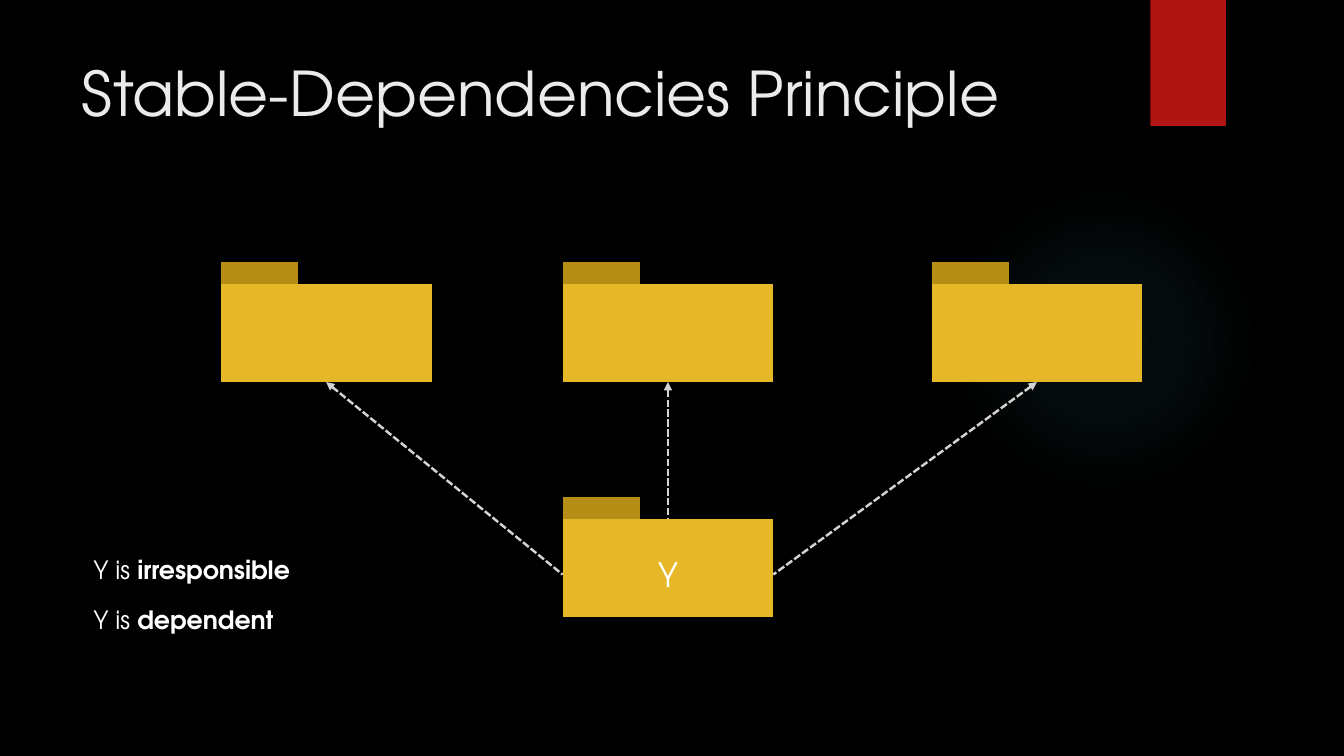
from typing import NamedTuple

import lxml.etree
import pptx
import pptx.dml.color
import pptx.enum.dml
import pptx.enum.shapes
import pptx.enum.text
import pptx.oxml
import pptx.oxml.ns
import pptx.util

Inches = pptx.util.Inches
Shapes = pptx.enum.shapes.MSO_SHAPE
Align = pptx.enum.text.PP_ALIGN

FONT = "TeX Gyre Adventor"
WHITE = "FFFFFF"
FOLDER_WIDTH, FOLDER_HEIGHT = 2.09, 0.97
TAB_WIDTH, TAB_HEIGHT, TAB_RISE = 0.77, 0.7, 0.22


class Folder(NamedTuple):
    left: float
    top: float
    label: str = ""

    @property
    def center(self) -> float:
        return self.left + FOLDER_WIDTH / 2

    @property
    def right(self) -> float:
        return self.left + FOLDER_WIDTH

    @property
    def body_top(self) -> float:
        return self.top + TAB_RISE

    @property
    def bottom(self) -> float:
        return self.body_top + FOLDER_HEIGHT


class Trait(NamedTuple):
    top: float
    word: str


def color(value: str) -> pptx.dml.color.RGBColor:
    return pptx.dml.color.RGBColor.from_string(value)


def add_block(slide, kind, left: float, top: float, width: float, height: float, fill: str):
    block = slide.shapes.add_shape(kind, Inches(left), Inches(top), Inches(width), Inches(height))
    block.shadow.inherit = False
    block.fill.solid()
    block.fill.fore_color.rgb = color(fill)
    block.line.fill.background()
    return block


def add_glow(slide, left: float, top: float, size: float, tint: str) -> None:
    """Add a circle whose faint tint fades out towards its edge."""
    glow = add_block(slide, Shapes.OVAL, left, top, size, size, tint)
    stops = "".join(
        f'<a:gs pos="{position * 1000}"><a:srgbClr val="{tint}">'
        f'<a:alpha val="{opacity * 1000}"/></a:srgbClr></a:gs>'
        for position, opacity in ((0, 7), (36, 6), (69, 0))
    )
    gradient = pptx.oxml.parse_xml(
        f'<a:gradFill {pptx.oxml.ns.nsdecls("a")}><a:gsLst>{stops}</a:gsLst><a:path path="circle">'
        '<a:fillToRect l="50000" t="50000" r="50000" b="50000"/></a:path></a:gradFill>'
    )
    properties = glow._element.spPr
    properties.replace(properties.find(pptx.oxml.ns.qn("a:solidFill")), gradient)


def add_text(slide, text: str, *, left: float, top: float, width: float, height: float,
             size: float, fill: str = WHITE, align=Align.LEFT, bold_end: str = "") -> None:
    """Add one line of text, closed by bold_end in bold."""
    box = slide.shapes.add_textbox(Inches(left), Inches(top), Inches(width), Inches(height))
    box.text_frame.word_wrap = True
    paragraph = box.text_frame.paragraphs[0]
    paragraph.alignment = align
    for words, bold in ((text, False), (bold_end, True)):
        if words:
            run = paragraph.add_run()
            run.text = words
            run.font.name = FONT
            run.font.size = pptx.util.Pt(size)
            run.font.bold = bold
            run.font.color.rgb = color(fill)


def add_folder(slide, folder: Folder) -> None:
    process = Shapes.FLOWCHART_PROCESS
    add_block(slide, process, folder.left, folder.top, TAB_WIDTH, TAB_HEIGHT, "B68E15")
    add_block(slide, process, folder.left, folder.body_top, FOLDER_WIDTH, FOLDER_HEIGHT, "E6B729")
    if folder.label:
        add_text(slide, folder.label, left=folder.left, top=folder.top + 0.52,
                 width=FOLDER_WIDTH, height=0.5, size=24, align=Align.CENTER)


def add_dependency(slide, target: Folder, x: float, y: float) -> None:
    """Draw a dashed arrow from the point x, y up to the target folder."""
    arrow = slide.shapes.add_connector(
        pptx.enum.shapes.MSO_CONNECTOR.STRAIGHT,
        Inches(target.center), Inches(target.bottom), Inches(x), Inches(y))
    arrow.line.color.rgb = color("D3D3D3")
    arrow.line.width = pptx.util.Pt(1.75)
    arrow.line.dash_style = pptx.enum.dml.MSO_LINE.SQUARE_DOT
    qn = pptx.oxml.ns.qn
    lxml.etree.SubElement(arrow.line._get_or_add_ln(), qn("a:headEnd"), type="triangle")
    lxml.etree.SubElement(arrow._element.spPr, qn("a:effectLst"))


def main() -> None:
    deck = pptx.Presentation()
    deck.slide_width, deck.slide_height = Inches(13.33), Inches(7.5)
    slide = deck.slides.add_slide(deck.slide_layouts[6])
    slide.background.fill.solid()
    slide.background.fill.fore_color.rgb = color("000000")

    add_glow(slide, 9.41, 1.83, 3.08, "50B9C1")
    add_block(slide, Shapes.RECTANGLE, 11.41, 0, 0.75, 1.25, "B01513")
    add_text(slide, "Stable-Dependencies Principle", left=0.71, top=0.5,
             width=10.29, height=1.53, size=44, fill="EBEBEB")

    dependent = Folder(5.58, 4.93, "Y")
    left, middle, right = (Folder(x, 2.6) for x in (2.19, 5.58, 9.24))
    for folder in (dependent, left, middle, right):
        add_folder(slide, folder)

    side = dependent.top + 0.77
    add_dependency(slide, middle, dependent.center, dependent.body_top)
    add_dependency(slide, left, dependent.left, side)
    add_dependency(slide, right, dependent.right, side)

    for trait in (Trait(5.45, "irresponsible"), Trait(5.95, "dependent")):
        add_text(slide, "Y is ", left=0.83, top=trait.top, width=2.96, height=0.4,
                 size=18, bold_end=trait.word)

    deck.save("out.pptx")


if __name__ == "__main__":
    main()
